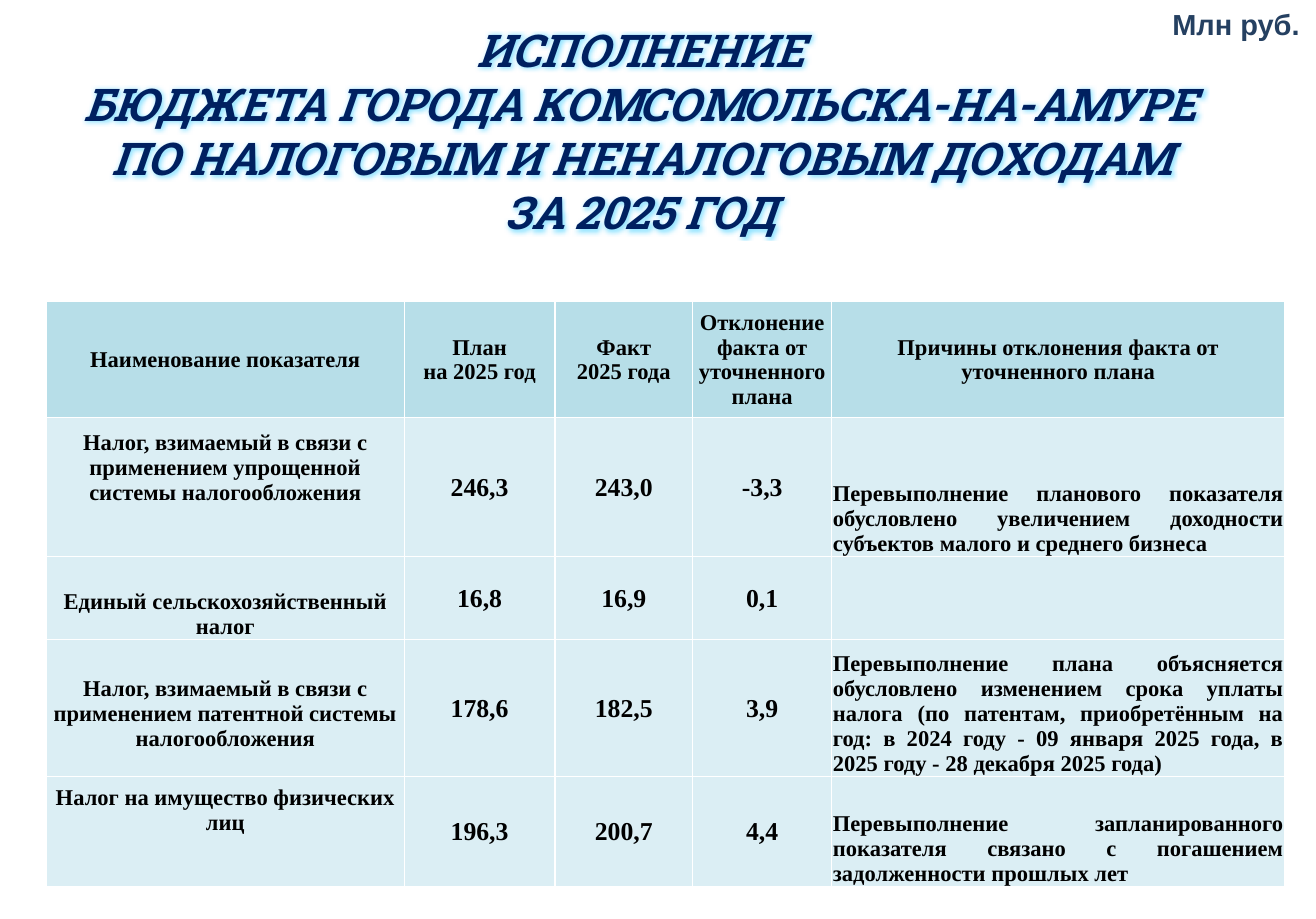
from dataclasses import dataclass

from lxml import etree
from pptx import Presentation
from pptx.dml.color import RGBColor
from pptx.enum.text import MSO_ANCHOR, MSO_AUTO_SIZE, PP_ALIGN
from pptx.oxml.ns import qn
from pptx.util import Inches, Pt

CENTER, JUSTIFY, LEFT = PP_ALIGN.CENTER, PP_ALIGN.JUSTIFY, PP_ALIGN.LEFT
TOP, MIDDLE, BOTTOM = MSO_ANCHOR.TOP, MSO_ANCHOR.MIDDLE, MSO_ANCHOR.BOTTOM
GROW = MSO_AUTO_SIZE.SHAPE_TO_FIT_TEXT

TITLE = [
    "ИСПОЛНЕНИЕ",
    "БЮДЖЕТА ГОРОДА КОМСОМОЛЬСКА-НА-АМУРЕ",
    "ПО НАЛОГОВЫМ И НЕНАЛОГОВЫМ ДОХОДАМ",
    "ЗА 2025 ГОД",
]
UNIT = ["Млн руб."]
HEADER = [
    ["Наименование показателя"],
    ["План", "на 2025 год"],
    ["Факт", "2025 года"],
    ["Отклонение факта от уточненного плана"],
    ["Причины отклонения факта от уточненного плана"],
]
# name, lines of space below the name, plan, actual, deviation, reason
TAXES = [
    ("Налог, взимаемый в связи с применением упрощенной системы налогообложения", 2,
     "246,3", "243,0", "-3,3",
     "Перевыполнение планового показателя обусловлено увеличением доходности "
     "субъектов малого и среднего бизнеса"),
    ("Единый сельскохозяйственный налог", 0, "16,8", "16,9", "0,1", ""),
    ("Налог, взимаемый в связи с применением патентной системы налогообложения", 1,
     "178,6", "182,5", "3,9",
     "Перевыполнение плана объясняется обусловлено изменением срока уплаты налога "
     "(по патентам, приобретённым на год: в 2024 году - 09 января 2025 года, "
     "в 2025 году - 28 декабря 2025 года)"),
    ("Налог на имущество физических лиц", 2, "196,3", "200,7", "4,4",
     "Перевыполнение запланированного показателя связано с погашением "
     "задолженности прошлых лет"),
]

SLIDE_SIZE = (11.36, 7.93)
TITLE_BOX = (0.18, 0.13, 10.69, 2.01)
UNIT_BOX = (10, 0, 1.36, 0.43)
TABLE_ORIGIN = (0.4, 2.6)
COLUMNS = [3.09, 1.3, 1.19, 1.2, 3.91]
ROWS = [1, 1.2, 0.72, 1.18, 0.95]
BOX_INSETS = (0.12, 0.06, 0.12, 0.06)
CELL_INSET = 0.01
LINE_HEIGHT = 0.22


@dataclass(frozen=True)
class Theme:
    title_color: str = "002060"
    glow: str = "8FE3FF"
    unit_color: str = "254061"
    text: str = "000000"
    header_fill: str = "B7DEE8"
    body_fill: str = "DBEEF4"
    border: str = "FFFFFF"
    title_font: str = "Roboto Slab"
    unit_font: str = "Arial"
    table_font: str = "Times New Roman"
    title_size: int = 28
    unit_size: int = 18
    label_size: int = 14
    figure_size: int = 16


THEME = Theme()


def add_colored(parent, tag, color, **attributes):
    """Append a DrawingML element that holds one colour."""
    element = etree.SubElement(parent, qn(tag), attributes)
    holder = etree.SubElement(element, qn("a:solidFill")) if tag.startswith("a:ln") else element
    etree.SubElement(holder, qn("a:srgbClr"), val=color)


def write(frame, lines, font, size, color, align=LEFT, italic=False, glow=None):
    for index, line in enumerate(lines):
        paragraph = frame.paragraphs[0] if index == 0 else frame.add_paragraph()
        paragraph.alignment = align
        run = paragraph.add_run()
        run.text = line
        if glow:
            effects = etree.SubElement(run._r.get_or_add_rPr(), qn("a:effectLst"))
            add_colored(effects, "a:glow", glow, rad=str(Pt(4)))
        run.font.name = font
        run.font.size = Pt(size)
        run.font.bold = True
        run.font.italic = italic
        run.font.color.rgb = RGBColor.from_string(color)


def set_frame(frame, wrap):
    frame.word_wrap = wrap
    frame.auto_size = GROW
    frame.vertical_anchor = TOP
    (frame.margin_left, frame.margin_top,
     frame.margin_right, frame.margin_bottom) = map(Inches, BOX_INSETS)


def fill_cell(cell, lines, fill, size=THEME.label_size, align=CENTER,
              anchor=MIDDLE, space_below=0):
    cell.margin_left = cell.margin_right = cell.margin_top = Inches(CELL_INSET)
    cell.margin_bottom = Inches(space_below)
    cell.vertical_anchor = anchor
    for side in ("a:lnL", "a:lnR", "a:lnT", "a:lnB"):
        add_colored(cell._tc.get_or_add_tcPr(), side, THEME.border, w=str(Pt(1)))
    cell.fill.solid()
    cell.fill.fore_color.rgb = RGBColor.from_string(fill)
    write(cell.text_frame, lines, THEME.table_font, size, THEME.text, align=align)


def add_tax_table(slide):
    left, top = TABLE_ORIGIN
    table = slide.shapes.add_table(
        len(ROWS), len(COLUMNS), Inches(left), Inches(top),
        Inches(sum(COLUMNS)), Inches(sum(ROWS))).table
    table.first_row = table.horz_banding = False
    for column, width in zip(table.columns, COLUMNS):
        column.width = Inches(width)
    for row, height in zip(table.rows, ROWS):
        row.height = Inches(height)

    for column, heading in enumerate(HEADER):
        fill_cell(table.cell(0, column), heading, THEME.header_fill)
    for row, (name, blank_lines, *figures, reason) in enumerate(TAXES, start=1):
        fill_cell(table.cell(row, 0), [name], THEME.body_fill, anchor=BOTTOM,
                  space_below=blank_lines * LINE_HEIGHT)
        for column, figure in enumerate(figures, start=1):
            fill_cell(table.cell(row, column), [figure], THEME.body_fill,
                      size=THEME.figure_size)
        fill_cell(table.cell(row, len(COLUMNS) - 1), [reason] if reason else [],
                  THEME.body_fill, align=JUSTIFY, anchor=BOTTOM)


def main():
    deck = Presentation()
    deck.slide_width, deck.slide_height = map(Inches, SLIDE_SIZE)
    slide = deck.slides.add_slide(deck.slide_layouts[5])

    title = slide.shapes.title
    title.left, title.top, title.width, title.height = map(Inches, TITLE_BOX)
    set_frame(title.text_frame, wrap=True)
    write(title.text_frame, TITLE, THEME.title_font, THEME.title_size,
          THEME.title_color, align=CENTER, italic=True, glow=THEME.glow)

    add_tax_table(slide)

    unit = slide.shapes.add_textbox(*map(Inches, UNIT_BOX))
    set_frame(unit.text_frame, wrap=False)
    write(unit.text_frame, UNIT, THEME.unit_font, THEME.unit_size, THEME.unit_color)

    deck.save("out.pptx")


if __name__ == "__main__":
    main()
